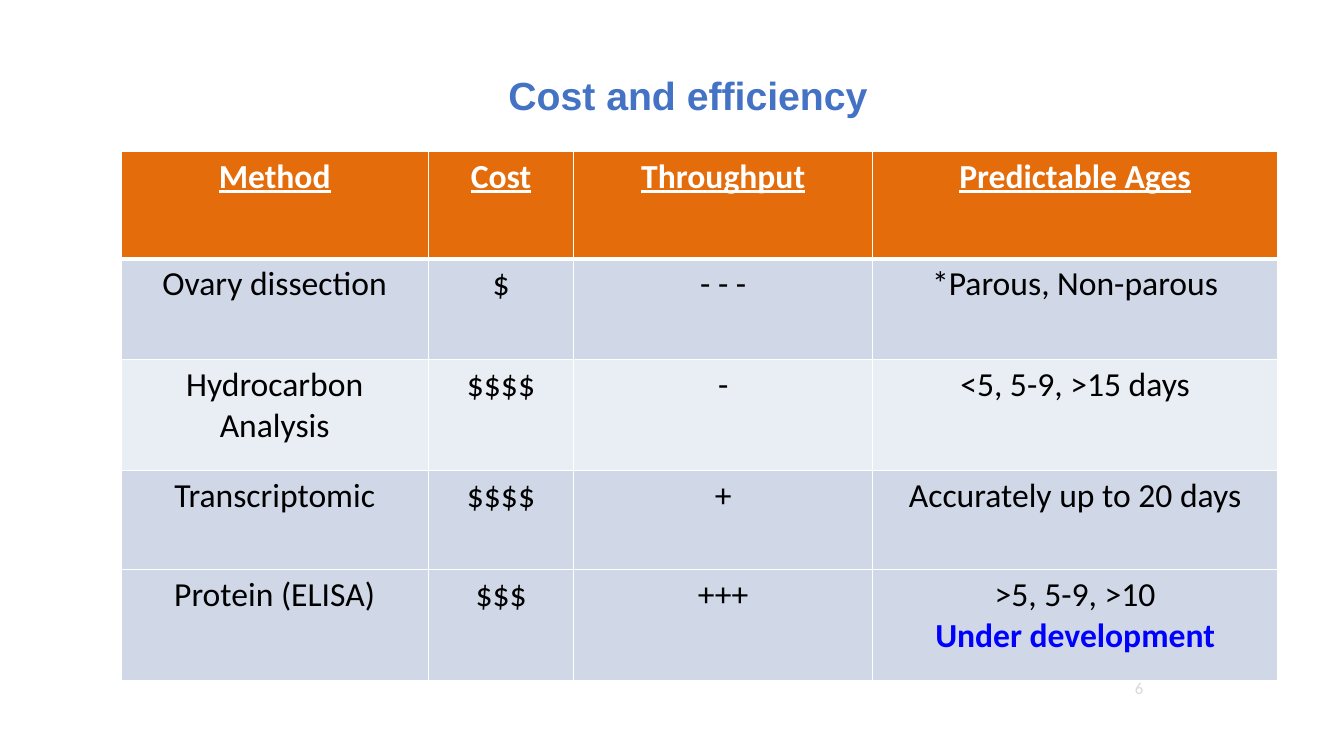
from lxml import etree
from pptx import Presentation
from pptx import util as u
from pptx.dml import color
from pptx.enum import text
from pptx.oxml import ns

ALIGN = text.PP_ALIGN
HEADS = ["Method", "Cost", "Throughput", "Predictable Ages"]
METHODS = [
    ["Ovary dissection", "$", "- - -", "*Parous, Non-parous"],
    ["Hydrocarbon Analysis", "$$$$", "-", "<5, 5-9, >15 days"],
    ["Transcriptomic", "$$$$", "+", "Accurately up to 20 days"],
    ["Protein (ELISA)", "$$$", "+++", ">5, 5-9, >10"],
]
WIDTHS = [3.66, 1.73, 3.56, 4.82]
HEIGHTS = [1.28, 1.2, 1.32, 1.18, 1.32]
BANDS = ["E46C0A", "D0D8E8", "E9EDF4", "D0D8E8", "D0D8E8"]


def rgb(code):
    return color.RGBColor.from_string(code)


def write(para, words, size=24, font="Calibri", ink="000000", bold=False,
          under=False, align=ALIGN.CENTER):
    para.alignment = align
    run = para.add_run()
    run.text = words
    face = run.font
    face.size, face.name = u.Pt(size), font
    face.bold, face.underline = bold, under
    face.color.rgb = rgb(ink)


def edge(cell, side, points, ink="FFFFFF"):
    """Draw one border; call for sides L, R, T, B in turn, before the fill."""
    line = etree.SubElement(cell._tc.get_or_add_tcPr(), ns.qn("a:ln" + side),
                            w=str(u.Pt(points)))
    fill = etree.SubElement(line, ns.qn("a:solidFill"))
    etree.SubElement(fill, ns.qn("a:srgbClr"), val=ink)


class Deck:
    """One slide on a grid of 16 columns by 9 rows."""

    def __init__(self):
        self.file = Presentation()
        self.file.slide_width = u.Inches(13.33)
        self.file.slide_height = u.Inches(7.5)
        self.slide = self.file.slides.add_slide(self.file.slide_layouts[5])

    def col(self, count):
        return round(self.file.slide_width * count / 16)

    def row(self, count):
        return round(self.file.slide_height * count / 9)

    def box(self, x, y, w, h):
        return self.col(x), self.row(y), self.col(w), self.row(h)

    def title(self, words, *place):
        shape = self.slide.shapes.title
        shape.left, shape.top, shape.width, shape.height = self.box(*place)
        frame = shape.text_frame
        frame.auto_size = text.MSO_AUTO_SIZE.NONE
        frame.vertical_anchor = text.MSO_ANCHOR.MIDDLE
        para = frame.paragraphs[0]
        para.line_spacing = 0.9
        write(para, words, size=28, font="Arial", ink="4472C4", bold=True)

    def label(self, words, *place, **style):
        frame = self.slide.shapes.add_textbox(*self.box(*place)).text_frame
        frame.word_wrap = True
        frame.vertical_anchor = text.MSO_ANCHOR.MIDDLE
        write(frame.paragraphs[0], words, **style)

    def table(self, x, y, data):
        place = self.box(x, y, sum(WIDTHS), sum(HEIGHTS))
        grid = self.slide.shapes.add_table(len(data), len(WIDTHS), *place).table
        for col, width in zip(grid.columns, WIDTHS):
            col.width = self.col(width)
        for r, line in enumerate(data):
            grid.rows[r].height = self.row(HEIGHTS[r])
            head = r == 0
            ink = "FFFFFF" if head else "000000"
            for c, words in enumerate(line):
                cell = grid.cell(r, c)
                write(cell.text_frame.paragraphs[0], words, ink=ink,
                      bold=head, under=head)
                for side in "LRTB":
                    thick = (r, side) in [(0, "B"), (1, "T")]
                    edge(cell, side, 3 if thick else 1)
                cell.fill.solid()
                cell.fill.fore_color.rgb = rgb(BANDS[r])
        return grid


def main():
    deck = Deck()
    deck.title("Cost and efficiency", 2.76, 0.54, 10.86, 1.26)
    deck.label("6", 2.51, 7.67, 11.22, 1.03, size=12, ink="D9D9D9",
               align=ALIGN.RIGHT)
    grid = deck.table(1.44, 1.8, [HEADS] + METHODS)
    ages = grid.cell(len(METHODS), len(HEADS) - 1).text_frame
    write(ages.add_paragraph(), "Under development", ink="0000FF", bold=True)
    deck.file.save("out.pptx")


if __name__ == "__main__":
    main()
